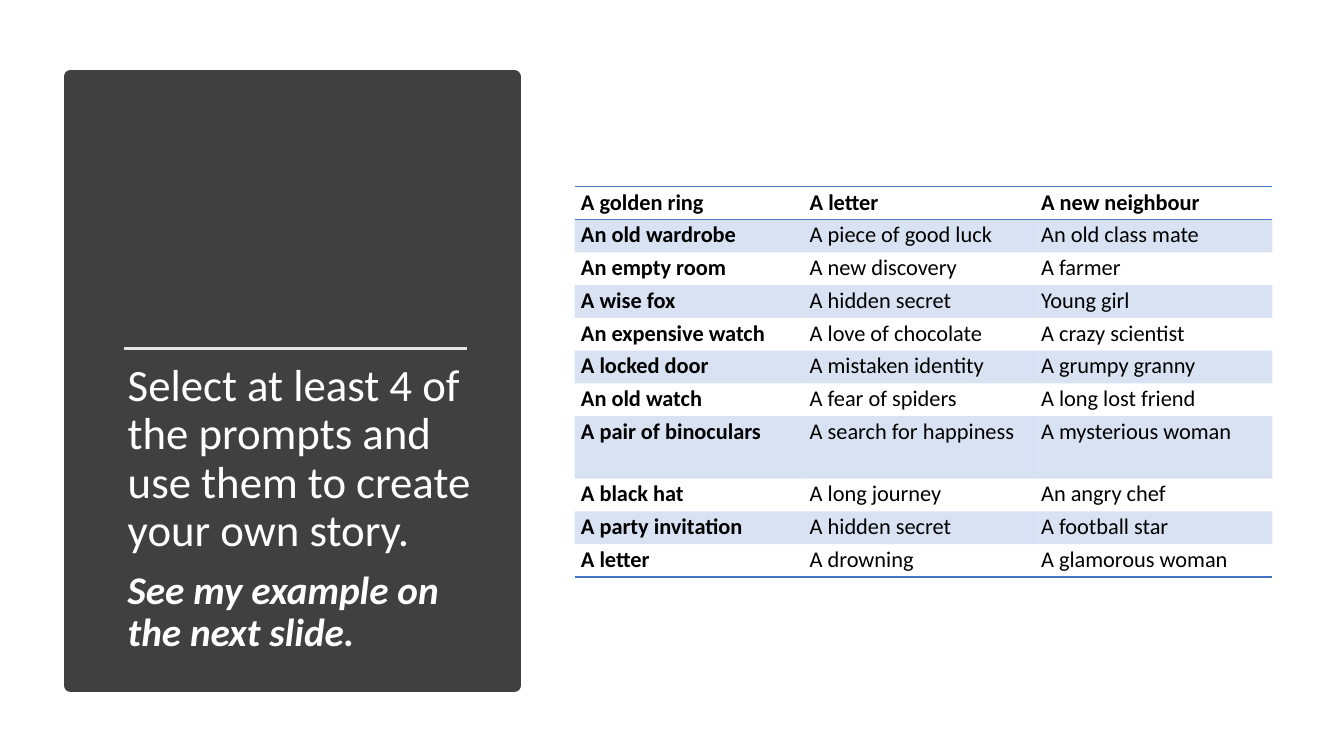
from lxml import etree
from pptx import Presentation
from pptx.dml.color import RGBColor
from pptx.enum import shapes, text
from pptx.oxml.ns import qn
from pptx.util import Pt

# Content
INSTRUCTIONS = [
    # wording, size, emphasised
    ("Select at least 4 of the prompts and use them to create your own story.", 32, False),
    ("See my example on the next slide.", 28, True),
]
PROMPTS = [
    ("A golden ring", "A letter", "A new neighbour"),
    ("An old wardrobe", "A piece of good luck", "An old class mate"),
    ("An empty room", "A new discovery", "A farmer"),
    ("A wise fox", "A hidden secret", "Young girl"),
    ("An expensive watch", "A love of chocolate", "A crazy scientist"),
    ("A locked door", "A mistaken identity", "A grumpy granny"),
    ("An old watch", "A fear of spiders", "A long lost friend"),
    ("A pair of binoculars", "A search for happiness", "A mysterious woman"),
    ("A black hat", "A long journey", "An angry chef"),
    ("A party invitation", "A hidden secret", "A football star"),
    ("A letter", "A drowning", "A glamorous woman"),
]
FONT = "Calibri"
DARK, RULE, BLUE, WHITE, BLACK = "404040", "E7E6E6", "4472C4", "FFFFFF", "000000"
BAND_OPACITY = 20

# Layout, in points
PANEL = (50.4, 54.7, 316.8, 434.9)
RULE_X, RULE_Y, RULE_WIDTH = 88.5, 249, 244.8
INSTRUCTIONS_BOX = (84.2, 255.6, 268.6, 175.7)
TABLE_LEFT, TABLE_TOP = 410.5, 133.4
COLUMN_WIDTHS = (163.4, 165.3, 169.6)
ROW_HEIGHT, TALL_ROW_HEIGHT, TALL_ROW = 23.42, 44.6, 7
NO_STYLE = "{2D5ABB26-0587-4C30-8999-92F81FD0307C}"


def colour(hex_code):
    return RGBColor.from_string(hex_code)


def points(values):
    return [Pt(value) for value in values]


def set_font(paragraph, size, hex_code, bold=False, italic=False):
    font = paragraph.font
    font.name, font.size = FONT, Pt(size)
    font.bold, font.italic = bold, italic
    font.color.rgb = colour(hex_code)


def add_border(cell, side):
    border = etree.SubElement(cell._tc.get_or_add_tcPr(), qn("a:ln" + side), w=str(Pt(1)))
    fill = etree.SubElement(border, qn("a:solidFill"))
    etree.SubElement(fill, qn("a:srgbClr"), val=BLUE)


def fill_band(cell):
    cell.fill.solid()
    cell.fill.fore_color.rgb = colour(BLUE)
    shade = cell._tc.tcPr.find(".//" + qn("a:srgbClr"))
    etree.SubElement(shade, qn("a:alpha"), val=str(BAND_OPACITY * 1000))


def add_panel(slide):
    panel = slide.shapes.add_shape(shapes.MSO_SHAPE.RECTANGLE, *points(PANEL))
    panel.shadow.inherit = False
    panel.fill.solid()
    panel.fill.fore_color.rgb = colour(DARK)
    panel.line.color.rgb = colour(DARK)
    panel.line.width = Pt(10)

    rule = slide.shapes.add_connector(
        shapes.MSO_CONNECTOR.STRAIGHT,
        *points((RULE_X, RULE_Y, RULE_X + RULE_WIDTH, RULE_Y)))
    rule.line.color.rgb = colour(RULE)
    rule.line.width = Pt(1.75)
    etree.SubElement(rule._element.spPr, qn("a:effectLst"))


def add_instructions(slide):
    frame = slide.shapes.add_textbox(*points(INSTRUCTIONS_BOX)).text_frame
    frame.word_wrap = True
    frame.vertical_anchor = text.MSO_ANCHOR.TOP
    for i, (wording, size, emphasised) in enumerate(INSTRUCTIONS):
        paragraph = frame.add_paragraph() if i else frame.paragraphs[0]
        paragraph.text = wording
        paragraph.line_spacing = 0.9
        paragraph.space_before = Pt(10)
        set_font(paragraph, size, WHITE, emphasised, emphasised)


def add_prompts(slide):
    last = len(PROMPTS) - 1
    height = ROW_HEIGHT * last + TALL_ROW_HEIGHT
    table = slide.shapes.add_table(
        len(PROMPTS), len(COLUMN_WIDTHS),
        *points((TABLE_LEFT, TABLE_TOP, sum(COLUMN_WIDTHS), height))).table
    table._tbl.tblPr.find(qn("a:tableStyleId")).text = NO_STYLE
    table.first_row = table.horz_banding = False
    for column, width in zip(table.columns, COLUMN_WIDTHS):
        column.width = Pt(width)

    for r, prompts in enumerate(PROMPTS):
        table.rows[r].height = Pt(TALL_ROW_HEIGHT if r == TALL_ROW else ROW_HEIGHT)
        for c, prompt in enumerate(prompts):
            cell = table.cell(r, c)
            cell.margin_left = cell.margin_right = Pt(4.5)
            cell.margin_top = cell.margin_bottom = 0
            paragraph = cell.text_frame.paragraphs[0]
            paragraph.text = prompt
            paragraph.line_spacing = 1.07
            set_font(paragraph, 16, BLACK, bold=r == 0 or c == 0)
            # Borders come before the fill in the cell properties
            if r == 0:
                add_border(cell, "T")
            if r in (0, last):
                add_border(cell, "B")
            if r % 2:
                fill_band(cell)
            else:
                cell.fill.background()


def main():
    deck = Presentation()
    deck.slide_width, deck.slide_height = Pt(960), Pt(540)
    slide = deck.slides.add_slide(deck.slide_layouts[6])
    add_panel(slide)
    add_instructions(slide)
    add_prompts(slide)
    deck.save("out.pptx")


if __name__ == "__main__":
    main()
